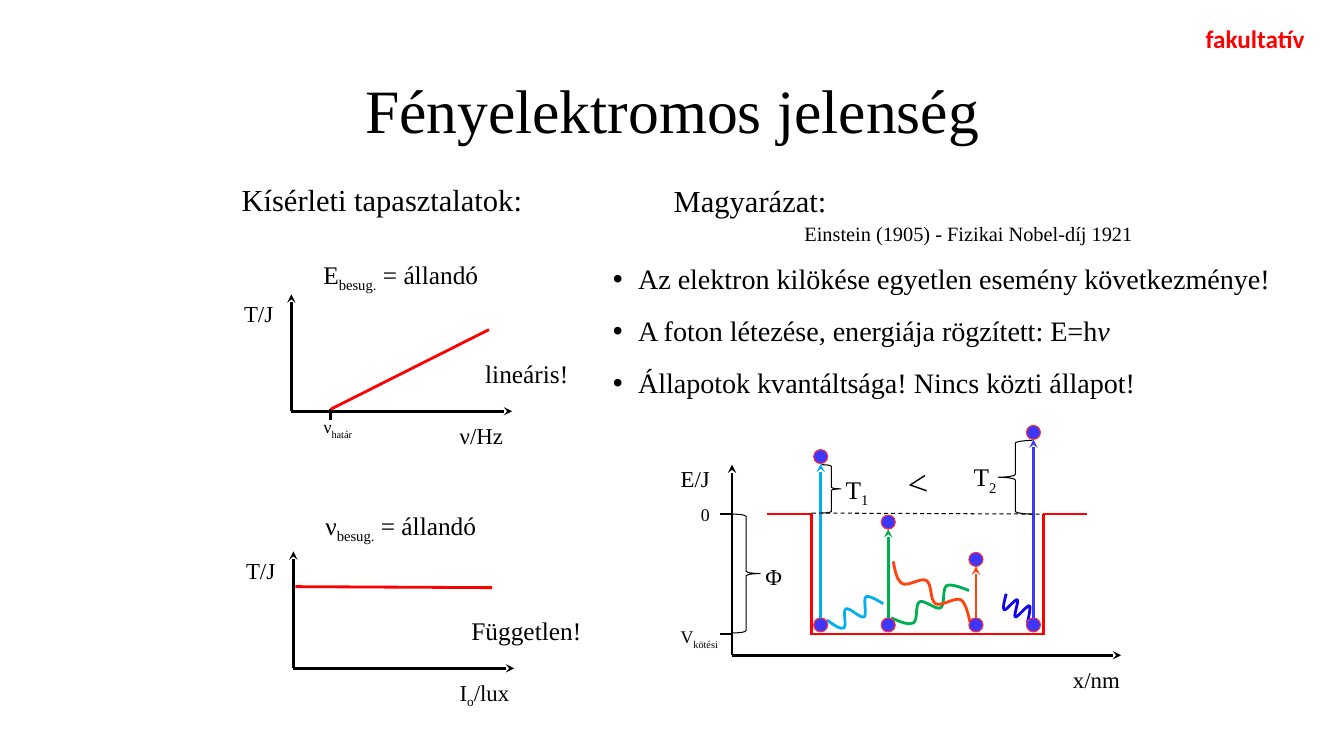
"""Build the slide on the photoelectric effect."""
import pptx
import pptx.util
import pptx.dml.color
import pptx.enum.dml
import pptx.enum.shapes
import pptx.enum.text
import pptx.oxml.ns
from lxml import etree

SERIF = "Times New Roman"
BLACK, RED, BLUE = "000000", "FF0000", "3F36FC"
TITLE = "Fényelektromos jelenség"
BULLETS = [
    "Az elektron kilökése egyetlen esemény következménye!",
    "A foton létezése, energiája rögzített: E=h_v_",
    "Állapotok kvantáltsága! Nincs közti állapot!",
]
LABELS = [
    ("Kísérleti tapasztalatok:", 2.29, 1.75, 3, 0.47, 21.8),
    ("Magyarázat:", 6.58, 1.76, 1.72, 0.47, 21.8),
    ("Einstein (1905) - Fizikai Nobel-díj 1921", 7.86, 2.15, 3.49, 0.35, 14.5),
    ("E_besug._ = állandó", 3.07, 2.52, 1.81, 0.41, 18.1),
    ("T/J", 2.32, 2.92, 0.49, 0.38, 16.3),
    ("lineáris!", 4.71, 3.5, 1.03, 0.41, 18.1),
    ("ν_határ_", 3.09, 4.08, 0.52, 0.31, 12.7),
    ("ν/Hz", 4.46, 4.13, 0.63, 0.38, 16.3),
    ("ν_besug._ = állandó", 3.09, 5.01, 1.77, 0.41, 18.1),
    ("T/J", 2.34, 5.47, 0.49, 0.38, 16.3),
    ("Független!", 4.57, 6.05, 1.3, 0.41, 18.1),
    ("I_o_/lux", 4.45, 6.68, 0.71, 0.38, 16.3),
    ("E/J", 6.65, 4.56, 0.49, 0.38, 16.3),
    ("0", 6.85, 4.95, 0.29, 0.31, 12.7),
    ("V_kötési_", 6.63, 6.16, 0.61, 0.31, 12.7),
    ("x/nm", 10.54, 6.55, 0.67, 0.38, 16.3),
    ("Φ", 7.49, 5.53, 0.37, 0.38, 16.3),
    ("T_1_", 8.28, 4.65, 0.44, 0.41, 18.1),
    ("T_2_", 9.55, 4.53, 0.44, 0.41, 18.1),
]
AXES = [
    (2.89, 4.08, 2.92, 5.08),
    (2.91, 6.63, 5.47, 5.1),
    (7.26, 6.5, 4.61, 11.12),
]
TICKS = [(3.28, 4.17, 3.28, 4.06), (7.25, 5.1, 7.14, 5.1), (7.25, 6.29, 7.14, 6.29)]
CURVES = [(3.28, 4.06, 4.85, 3.27), (2.93, 5.82, 4.88, 5.83)]
WELL = [
    (8.04, 6.29, 10.36, 6.29),
    (10.34, 5.1, 10.78, 5.1),
    (7.61, 5.1, 8.05, 5.1),
    (8.05, 5.1, 8.05, 6.3),
    (10.35, 5.1, 10.35, 6.3),
]
BRACES = [
    ("RIGHT_BRACE", 7.26, 5.1, 0.28, 1.18),
    ("RIGHT_BRACE", 8.15, 4.61, 0.19, 0.48),
    ("LEFT_BRACE", 9.9, 4.37, 0.34, 0.73),
]
WAVES = [
    ("00B050", [(8.84, 6.13), (9.06, 6.18), (9.12, 5.97), (9.33, 6.03), (9.39, 5.81), (9.61, 5.86)]),
    ("FF420E", [(8.86, 5.57), (8.95, 5.79), (9.19, 5.76), (9.28, 5.99), (9.53, 5.95), (9.62, 6.17)]),
    ("1302EE", [(9.98, 5.89), (9.96, 6.05), (10.09, 5.95), (10.07, 6.12), (10.21, 6.01), (10.19, 6.18)]),
    ("00B0F0", [(8.2, 6.15), (8.37, 6.23), (8.39, 6.04), (8.57, 6.12), (8.59, 5.92), (8.76, 5.99)]),
]
JUMPS = [(8.14, 4.53, "00B0F0"), (8.81, 5.18, "00B050"), (9.68, 5.55, "FF420E"), (10.25, 4.29, BLUE)]
FLOOR, DOT = 6.2, 0.14

qn = pptx.oxml.ns.qn
KINDS = pptx.enum.shapes.MSO_SHAPE
ALIGN = pptx.enum.text.PP_ALIGN


def inch(*vals):
    return [pptx.util.Cm(val * 2.54) for val in vals]


def tint(code):
    return pptx.dml.color.RGBColor.from_string(code)


def write(para, text, size=18, font=SERIF, color=BLACK, bold=None, mark="sub", align=ALIGN.CENTER):
    para.alignment = align
    for i, part in enumerate(text.split("_")):
        if not part:
            continue
        run = para.add_run()
        run.text = part
        run.font.size, run.font.name, run.font.bold = pptx.util.Pt(size), font, bold
        run.font.color.rgb = tint(color)
        if i % 2 and mark == "sub":
            run.font._element.set("baseline", "-25000")
        elif i % 2:
            run.font.italic = True


def label(text, x, y, w, h, size, **form):
    box = slide.shapes.add_textbox(*inch(x, y, w, h))
    box.text_frame.word_wrap = False
    box.text_frame.auto_size = pptx.enum.text.MSO_AUTO_SIZE.SHAPE_TO_FIT_TEXT
    write(box.text_frame.paragraphs[0], text, size=size, **form)
    return box


def stroke(shape, color, width):
    shape.line.color.rgb = tint(color)
    shape.line.width = pptx.util.Pt(width)


def line(ends, color=BLACK, width=2, arrow=False, dash=False):
    link = slide.shapes.add_connector(pptx.enum.shapes.MSO_CONNECTOR.STRAIGHT, *inch(*ends))
    stroke(link, color, width)
    if dash:
        link.line.dash_style = pptx.enum.dml.MSO_LINE.DASH
    if arrow:
        etree.SubElement(link.line._get_or_add_ln(), qn("a:tailEnd"), type="stealth")
    etree.SubElement(link._element.spPr, qn("a:effectLst"))


def shape(kind, x, y, w, h, fill=None, color=BLACK):
    item = slide.shapes.add_shape(kind, *inch(x, y, w, h))
    item.shadow.inherit = False
    if fill:
        item.fill.solid()
        item.fill.fore_color.rgb = tint(fill)
    else:
        item.fill.background()
    stroke(item, color, 0.75)


def wave(color, knots):
    """Draw a smooth curve whose tangents follow the neighbouring knots."""
    last = len(knots) - 1
    slope = [
        [(knots[min(i + 1, last)][k] - knots[max(i - 1, 0)][k]) / 6 for k in (0, 1)]
        for i in range(last + 1)
    ]
    slope[last] = [0, 0]
    pts = []
    for i in range(last):
        into = [knots[i + 1][k] - slope[i + 1][k] for k in (0, 1)]
        if i:
            out = [knots[i][k] + slope[i][k] for k in (0, 1)]
        else:
            out = [(knots[0][k] + into[k]) / 2 for k in (0, 1)]
        pts += [out, into, knots[i + 1]]
    pen = slide.shapes.build_freeform(*inch(*knots[0]))
    pen.add_line_segments([inch(*pt) for pt in pts], close=False)
    curve = pen.convert_to_shape()
    curve.shadow.inherit = False
    curve.fill.background()
    stroke(curve, color, 2)
    steps = list(curve._element.iter(qn("a:lnTo")))
    for i in range(0, len(steps), 3):
        bend = etree.Element(qn("a:cubicBezTo"))
        steps[i].addprevious(bend)
        for step in steps[i:i + 3]:
            bend.append(step[0])
            step.getparent().remove(step)


def dot(x, y):
    shape(KINDS.OVAL, x - DOT / 2, y - DOT / 2, DOT, DOT, fill=BLUE, color="FF3333")


deck = pptx.Presentation()
deck.slide_width, deck.slide_height = inch(13.33, 7.5)
slide = deck.slides.add_slide(deck.slide_layouts.get_by_name("Title Only"))
title = slide.shapes.title
title.left, title.top, title.width, title.height = inch(0.92, 0.4, 11.5, 1.45)
title.text_frame.vertical_anchor = pptx.enum.text.MSO_ANCHOR.MIDDLE
title.text_frame.paragraphs[0].line_spacing = 0.9
write(title.text_frame.paragraphs[0], TITLE, size=44)

body = slide.shapes.add_textbox(*inch(5.98, 2.58, 6.93, 1.65)).text_frame
body.word_wrap = True
for i, text in enumerate(BULLETS):
    para = body.add_paragraph() if i else body.paragraphs[0]
    write(para, text, size=20.1, mark="ital", align=ALIGN.LEFT)
    para.line_spacing = 0.9
    para.space_before, para.space_after = pptx.util.Pt(10), pptx.util.Pt(5.4)
    props = para._p.get_or_add_pPr()
    props.set("marL", "228600")
    props.set("indent", "-228600")
    etree.SubElement(props, qn("a:buFont"), typeface="Arial")
    etree.SubElement(props, qn("a:buChar"), char="•")

for x, y, top, right in AXES:
    line((x, y, x, top), arrow=True)
    line((x, y, right, y), arrow=True)
for ends in TICKS:
    line(ends)
for ends in CURVES + WELL:
    line(ends, color=RED)
for color, knots in WAVES:
    wave(color, knots)
for x, top, color in JUMPS:
    dot(x, FLOOR)
    line((x, FLOOR - DOT / 2, x, top + DOT / 2), color=color, arrow=True)
    dot(x, top)
line((8.05, 5.09, 10.35, 5.1), width=0.75, dash=True)
for kind, *place in BRACES:
    shape(KINDS[kind], *place)
for row in LABELS:
    label(*row)
label("<", 8.9, 4.52, 0.4, 0.53, 25.4).rotation = 353.4
label("fakultatív", 11.86, 0.18, 1.19, 0.4, 18, font="Calibri", color=RED, bold=True, align=ALIGN.LEFT)
deck.save("out.pptx")
